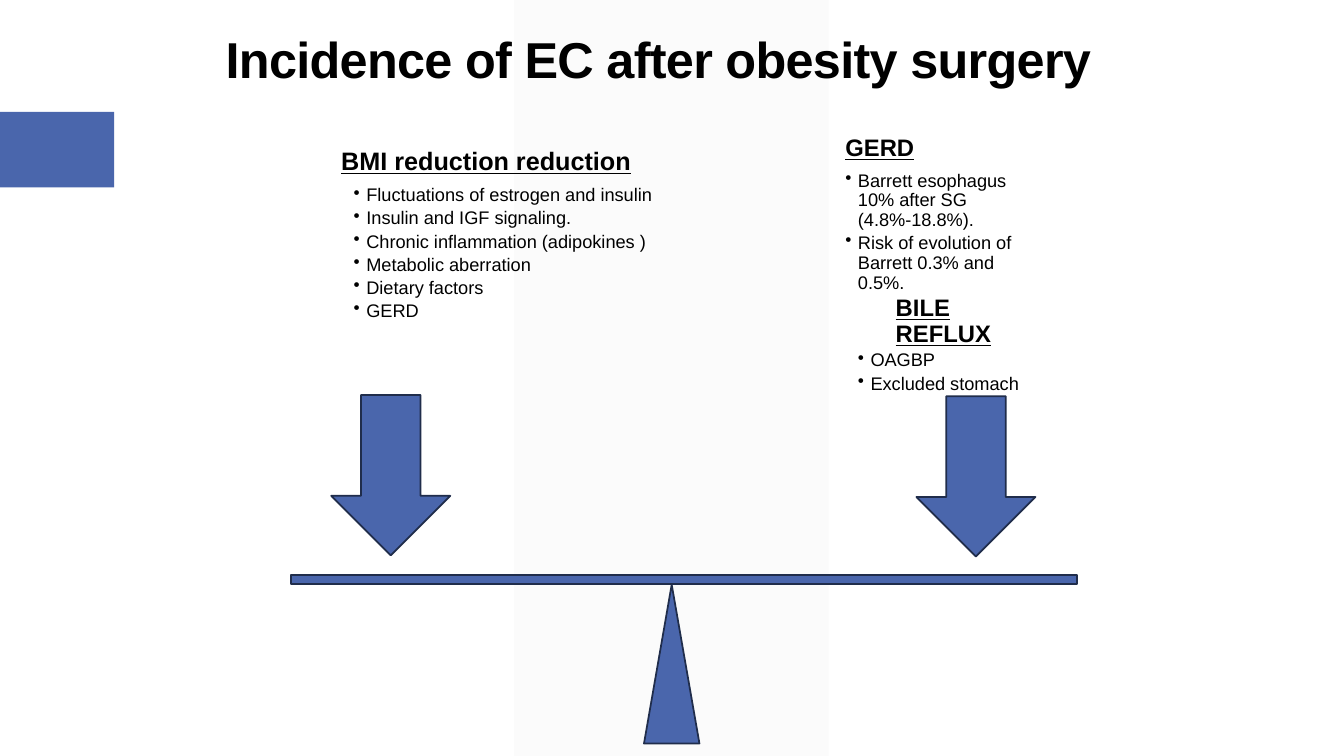
"""Build the slide that weighs obesity surgery's effects on EC incidence."""
from typing import NamedTuple

from lxml.etree import SubElement
from pptx import Presentation
from pptx.dml.color import RGBColor
from pptx.enum.shapes import MSO_SHAPE as Shape
from pptx.enum.text import MSO_ANCHOR as Anchor, PP_ALIGN as Align
from pptx.oxml.ns import qn
from pptx.util import Pt

FONT, BLACK, BLUE, NAVY, GREY = "Arial", "000000", "4A66AC", "202D4B", "F2F2F2"


class Frame(NamedTuple):
    left: float
    top: float
    width: float
    height: float

    def lengths(self) -> list:
        return [Pt(value) for value in self]


class Block(NamedTuple):
    kind: Shape
    frame: Frame
    fill: str = BLUE
    line: str | None = NAVY


class Line(NamedTuple):
    text: str
    size: float = 13
    heading: bool = False
    level: int = 1
    indent: float = 18
    after: float = 2.4


class Column(NamedTuple):
    frame: Frame
    anchor: Anchor
    inset_x: float
    inset_y: float
    lines: list[Line]


BAND = Block(Shape.PARALLELOGRAM, Frame(367.2, 0, 224.64, 540), GREY, None)
TAB = Block(Shape.RECTANGLE, Frame(0, 79.92, 81.5, 54), BLUE, None)
TITLE = Frame(154, 7.2, 648, 60.5)
SCALE = [
    Block(Shape.FLOWCHART_EXTRACT, Frame(460, 417.6, 39.6, 113.5)),
    Block(Shape.RECTANGLE, Frame(207.8, 410.8, 561.6, 6.5)),
    Block(Shape.DOWN_ARROW, Frame(236.6, 282.2, 85, 114.5)),
    Block(Shape.DOWN_ARROW, Frame(654.6, 283, 85, 114.5)),
]
COLUMNS = [
    Column(Frame(236.6, 103, 241.2, 131.8), Anchor.TOP, 7.2, 3.6, [
        Line("BMI reduction reduction", 18, True, 0, 0, 7),
        Line("Fluctuations of estrogen and insulin"),
        Line("Insulin and IGF signaling."),
        Line("Chronic inflammation (adipokines )"),
        Line("Metabolic aberration"),
        Line("Dietary factors"),
        Line("GERD"),
    ]),
    Column(Frame(594.8, 87.8, 144.7, 203), Anchor.MIDDLE, 9, 9, [
        Line("GERD", 17, True, 0, 0, 7),
        Line("Barrett esophagus 10% after SG (4.8%-18.8%).", indent=9),
        Line("Risk of evolution of Barrett 0.3% and 0.5%.", indent=9),
        Line("BILE REFLUX", 17, True, 1, 0),
        Line("OAGBP", level=2),
        Line("Excluded stomach", level=2),
    ]),
]


def colour(code: str) -> RGBColor:
    return RGBColor.from_string(code)


def draw_block(page, block: Block):
    box = page.shapes.add_shape(block.kind, *block.frame.lengths())
    box.shadow.inherit = False
    box.fill.solid()
    box.fill.fore_color.rgb = colour(block.fill)
    if block.line:
        box.line.color.rgb = colour(block.line)
        box.line.width = Pt(1.25)
    else:
        box.line.fill.background()
    return box


def draw_band(page, block: Block) -> None:
    box = draw_block(page, block)
    box.adjustments[0] = 0
    tone = box.fill._xPr.find(f".//{qn('a:srgbClr')}")
    SubElement(tone, qn("a:alpha"), val="30000")


def style(para, size: float, bold: bool) -> None:
    para.alignment = Align.LEFT
    para.line_spacing = 0.9
    para.font.name = FONT
    para.font.size = Pt(size)
    para.font.bold = bold
    para.font.color.rgb = colour(BLACK)


def draw_title(page, text: str) -> None:
    title = page.shapes.title
    title.left, title.top, title.width, title.height = TITLE.lengths()
    frame = title.text_frame
    frame.word_wrap = True
    frame.vertical_anchor = Anchor.BOTTOM
    para = frame.paragraphs[0]
    span = para.add_run()
    span.text = text
    style(para, 36, True)
    span.font._element.set("spc", "-50")
    page.shapes._spTree.append(title._element)


def write_line(para, line: Line) -> None:
    para.add_run().text = line.text
    style(para, line.size, line.heading)
    para.font.underline = line.heading
    para.level = line.level
    para.space_before = Pt(0)
    para.space_after = Pt(line.after)
    if not line.heading:
        properties = para._p.get_or_add_pPr()
        properties.set("marL", str(Pt(line.indent)))
        properties.set("indent", str(-Pt(9)))
        bullet = SubElement(properties, qn("a:buChar"), char="•")
        properties.find(qn("a:defRPr")).addprevious(bullet)


def draw_column(page, column: Column) -> None:
    frame = page.shapes.add_textbox(*column.frame.lengths()).text_frame
    frame.word_wrap = True
    frame.vertical_anchor = column.anchor
    frame.margin_left = frame.margin_right = Pt(column.inset_x)
    frame.margin_top = frame.margin_bottom = Pt(column.inset_y)
    for index, line in enumerate(column.lines):
        write_line(frame.add_paragraph() if index else frame.paragraphs[0], line)


def main() -> None:
    deck = Presentation()
    deck.slide_width, deck.slide_height = Pt(960), Pt(540)
    page = deck.slides.add_slide(deck.slide_layouts[5])
    draw_band(page, BAND)
    draw_block(page, TAB)
    draw_title(page, "Incidence of EC after obesity surgery")
    for block in SCALE:
        draw_block(page, block)
    for column in COLUMNS:
        draw_column(page, column)
    deck.save("out.pptx")


if __name__ == "__main__":
    main()
